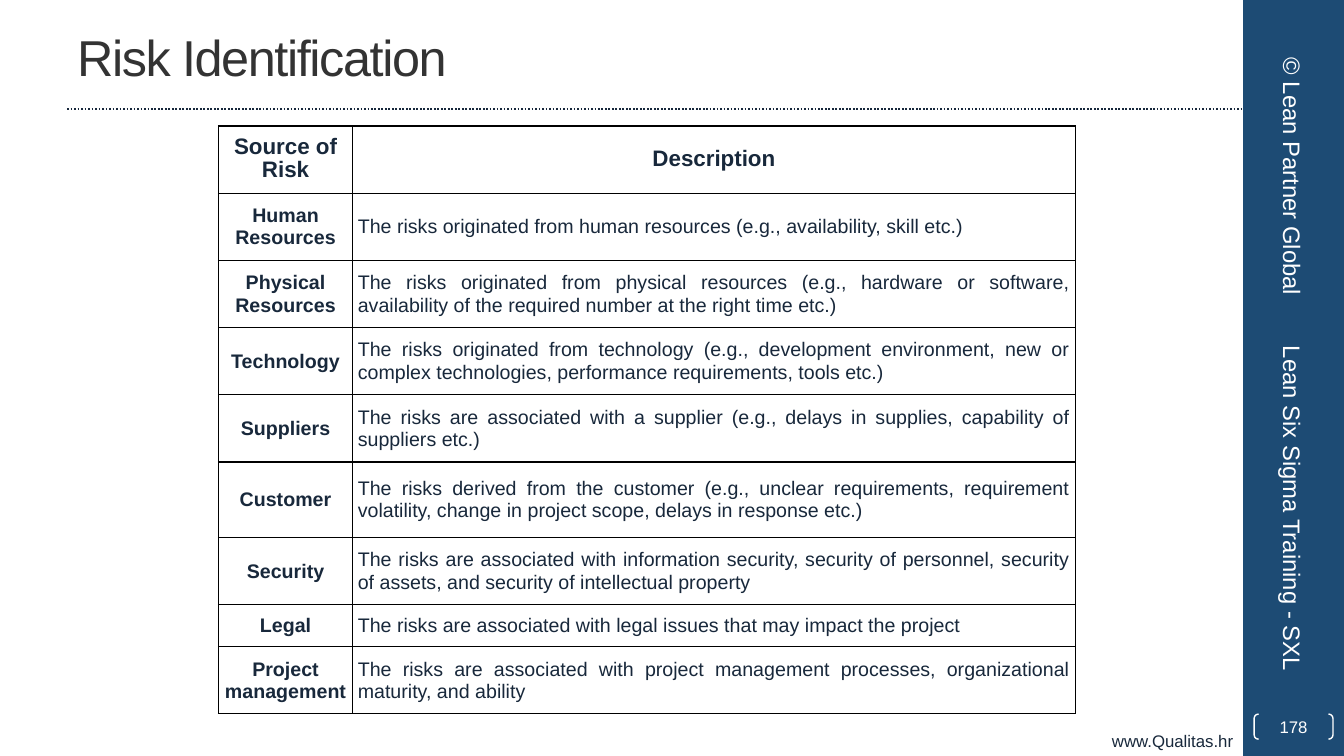
import lxml.etree
import pptx
import pptx.dml.color
import pptx.enum.dml
import pptx.enum.shapes
import pptx.enum.text
import pptx.oxml.ns
import pptx.util

RGBColor = pptx.dml.color.RGBColor
ALIGN = pptx.enum.text.PP_ALIGN
MIDDLE = pptx.enum.text.MSO_ANCHOR.MIDDLE
SHAPES = pptx.enum.shapes.MSO_SHAPE

WHITE = RGBColor(0xFF, 0xFF, 0xFF)
BLACK = RGBColor(0x00, 0x00, 0x00)
BAND_BLUE = RGBColor(0x1D, 0x4B, 0x74)
INK = RGBColor(0x18, 0x28, 0x3B)
RULE_INK = RGBColor(0x17, 0x27, 0x3B)
TITLE_GREY = RGBColor(0x33, 0x33, 0x33)

COLUMNS, ROWS = 160, 90  # square grid, twelve units to the inch
BAND_LEFT = 148
MARGIN = 8
RULE_TOP = 13

RISKS = [
    ("Human Resources", "The risks originated from human resources (e.g., availability, skill etc.)"),
    ("Physical Resources", "The risks originated from physical resources (e.g., hardware or software, "
     "availability of the required number at the right time etc.)"),
    ("Technology", "The risks originated from technology (e.g., development environment, new or "
     "complex technologies, performance requirements, tools etc.)"),
    ("Suppliers", "The risks are associated with a supplier (e.g., delays in supplies, "
     "capability of suppliers etc.)"),
    ("Customer", "The risks derived from the customer (e.g., unclear requirements, requirement "
     "volatility, change in project scope, delays in response etc.)"),
    ("Security", "The risks are associated with information security, security of personnel, "
     "security of assets, and security of intellectual property"),
    ("Legal", "The risks are associated with legal issues that may impact the project"),
    ("Project management", "The risks are associated with project management processes, "
     "organizational maturity, and ability"),
]
RISK_COLUMNS = [16, 86]
RISK_ROWS = [8, 8, 8, 8, 8, 9, 8, 5, 8]


def grid(units):
    return pptx.util.Inches(units / 12)


def write(frame, text, size=14, color=INK, bold=False, align=ALIGN.LEFT, leading=None, tracking=None):
    paragraph = frame.paragraphs[0]
    paragraph.alignment = align
    if leading:
        paragraph.line_spacing = pptx.util.Pt(leading)
    run = paragraph.add_run()
    run.text = text
    run.font.name = "Arial"
    run.font.size = pptx.util.Pt(size)
    run.font.bold = bold
    run.font.color.rgb = color
    if tracking:
        run.font._element.set("spc", str(int(tracking * 100)))


def draw_borders(cell, color, width):
    properties = cell._tc.get_or_add_tcPr()
    for position, side in enumerate(("lnL", "lnR", "lnT", "lnB")):
        border = lxml.etree.Element(pptx.oxml.ns.qn(f"a:{side}"), w=str(pptx.util.Pt(width)))
        fill = lxml.etree.SubElement(border, pptx.oxml.ns.qn("a:solidFill"))
        lxml.etree.SubElement(fill, pptx.oxml.ns.qn("a:srgbClr"), val=str(color))
        properties.insert(position, border)


class GridSlide:
    """The current slide; every length is in grid columns and rows."""

    def __init__(self, presentation):
        presentation.slide_width = grid(COLUMNS)
        presentation.slide_height = grid(ROWS)
        self.slide = presentation.slides.add_slide(presentation.slide_layouts[6])
        self.shapes = self.slide.shapes

    def text(self, box, text, anchor=MIDDLE, rotation=0, **style):
        label = self.shapes.add_textbox(*map(grid, box))
        label.rotation = rotation
        label.text_frame.word_wrap = True
        label.text_frame.vertical_anchor = anchor
        write(label.text_frame, text, **style)

    def shape(self, preset, box, fill=None, line=None):
        shape = self.shapes.add_shape(preset, *map(grid, box))
        shape.shadow.inherit = False
        if fill is None:
            shape.fill.background()
        else:
            shape.fill.solid()
            shape.fill.fore_color.rgb = fill
        if line is None:
            shape.line.fill.background()
        else:
            shape.line.color.rgb = line
            shape.line.width = pptx.util.Pt(1)
        return shape

    def dotted_rule(self, left, right, top):
        rule = self.shapes.add_connector(
            pptx.enum.shapes.MSO_CONNECTOR.STRAIGHT, grid(left), grid(top), grid(right), grid(top))
        rule.line.color.rgb = RULE_INK
        rule.line.width = pptx.util.Pt(1.25)
        rule.line.dash_style = pptx.enum.dml.MSO_LINE.ROUND_DOT
        lxml.etree.SubElement(rule._element.spPr, pptx.oxml.ns.qn("a:effectLst"))

    def page_number(self, box, number):
        bracket = self.shape(SHAPES.DOUBLE_BRACKET, box, line=WHITE)
        bracket.adjustments[0] = 0.18
        frame = bracket.text_frame
        frame.margin_left = frame.margin_right = frame.margin_top = frame.margin_bottom = 0
        frame.vertical_anchor = MIDDLE
        write(frame, number, size=12, color=WHITE, align=ALIGN.CENTER)

    def table(self, left, top, widths, heights, header, entries):
        box = (left, top, sum(widths), sum(heights))
        table = self.shapes.add_table(len(heights), len(widths), *map(grid, box)).table
        table.first_row = table.horz_banding = False
        for column, width in zip(table.columns, widths):
            column.width = grid(width)
        for row, height in zip(table.rows, heights):
            row.height = grid(height)
        for row, texts in enumerate([header, *entries]):
            for column, text in enumerate(texts):
                heading = row == 0 or column == 0
                self.table_cell(table.cell(row, column), text, size=14 if row else 16,
                                bold=heading, align=ALIGN.CENTER if heading else ALIGN.JUSTIFY)

    def table_cell(self, cell, text, **style):
        cell.fill.background()
        cell.margin_left = cell.margin_right = pptx.util.Inches(0.05)
        cell.margin_top = cell.margin_bottom = 0
        cell.vertical_anchor = MIDDLE
        write(cell.text_frame, text, leading=16, **style)
        draw_borders(cell, BLACK, 1)


def main():
    presentation = pptx.Presentation()
    page = GridSlide(presentation)
    page.shape(SHAPES.RECTANGLE, (BAND_LEFT, 0, COLUMNS - BAND_LEFT, ROWS), fill=BAND_BLUE)
    page.text((0, 86.4, BAND_LEFT, 3.6), "www.Qualitas.hr", size=12, align=ALIGN.RIGHT,
              anchor=pptx.enum.text.MSO_ANCHOR.TOP)
    page.dotted_rule(MARGIN, BAND_LEFT, RULE_TOP)
    page.text((MARGIN, 0.4, 133.3, 12.6), "Risk Identification", size=36, color=TITLE_GREY, tracking=-1)
    page.page_number((149.3, 85, 9.4, 3), "178")
    page.text((134.9, 17.8, 38, 6.4), "© Lean Partner Global", rotation=90, size=17,
              color=WHITE, align=ALIGN.CENTER)
    page.text((131.9, 58.8, 44, 6.4), "Lean Six Sigma Training - SXL", rotation=90, size=17, color=WHITE)
    page.table(26, 15, RISK_COLUMNS, RISK_ROWS, ("Source of Risk", "Description"), RISKS)
    presentation.save("out.pptx")


if __name__ == "__main__":
    main()
